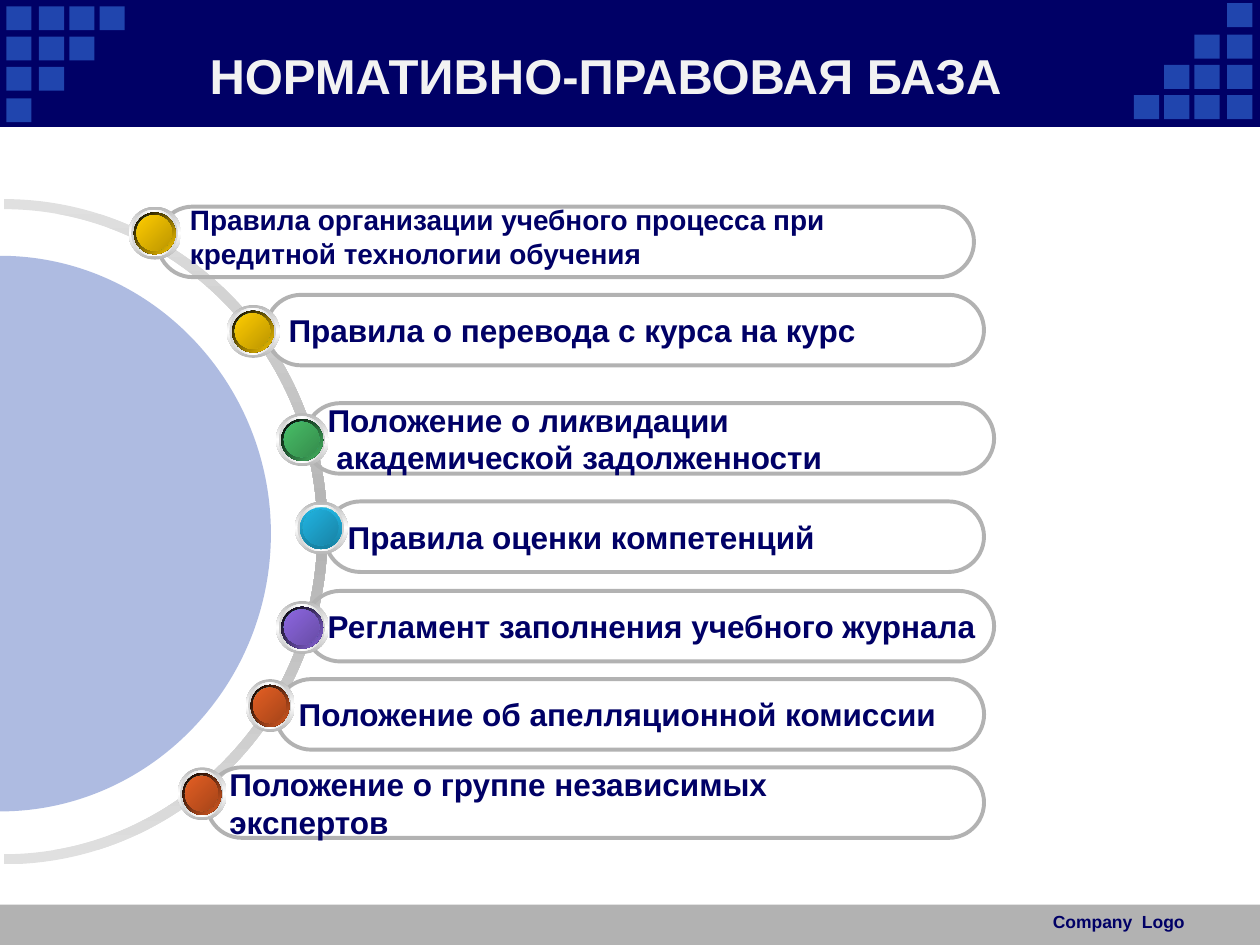
from lxml.etree import SubElement
from pptx import Presentation
from pptx.dml.color import RGBColor
from pptx.enum.shapes import MSO_SHAPE as Shape
from pptx.enum.text import MSO_ANCHOR as Anchor, MSO_AUTO_SIZE as AutoSize, PP_ALIGN as Align
from pptx.oxml.ns import qn
from pptx.util import Inches, Pt

COLUMNS, ROWS = 100, 75
CELL = Inches(0.1)
FONT = "Arial"
BEND = 0.55  # handle length of a quarter ellipse
COLORS = {
    "navy": "000066", "blue": "2045AE", "gray": "B2B2B2", "pale": "E0E0E0",
    "title": "F2F2F2", "black": "000000", "white": "FFFFFF", "teal": "3DC5C5",
    "yellow": "FFCC00", "green": "48BE67", "cyan": "21B3E1",
    "violet": "8D67E1", "orange": "E35E23",
}

# Pill (left, right, row), label lines with |italic| parts, ball (left, top, width), colour
ITEMS = [
    ((12.5, 77.3, 16.4), [], (10.2, 16.4, 4.2), "yellow"),
    ((21.1, 78.1, 23.4), ["Правила о перевода с курса на курс"], (18, 24.2, 4.2), "yellow"),
    ((24.2, 78.9, 32), ["Положение о ли|к|видации", " академической задолженности"],
     (21.9, 32.8, 4.2), "green"),
    ((25.8, 78.1, 39.8), ["Правила оценки компетенций"], (23.4, 39.8, 4.2), "cyan"),
    ((24.2, 78.9, 46.9), ["Регламент заполнения учебного журнала"], (21.9, 47.7, 4.2), "violet"),
    ((21.9, 78.1, 53.9), ["Положение об апелляционной комиссии"], (19.5, 53.9, 3.9), "orange"),
    ((16.4, 78.1, 60.9), ["Положение о группе независимых", "экспертов"],
     (14.1, 60.9, 3.9), "orange"),
]


def cells(*values):
    return [round(value * CELL) for value in values]


def half_ellipse(center, radius_x, radius_y):
    """Knots and handles of the right half, from top to bottom."""
    shares = [(0, -1), (BEND, -1), (1, -BEND), (1, 0), (1, BEND), (BEND, 1), (0, 1)]
    return [cells(center[0] + x * radius_x, center[1] + y * radius_y) for x, y in shares]


class SlideBuilder:
    def __init__(self, slide):
        self.slide = slide

    def color(self, name):
        return RGBColor.from_string(COLORS[name])

    def solid(self, shape, name, opacity=None):
        shape.fill.solid()
        shape.fill.fore_color.rgb = self.color(name)
        if opacity:
            color = shape.fill._xPr.find(qn("a:solidFill"))[0]
            SubElement(color, qn("a:alpha"), val=str(opacity * 1000))

    def gradient(self, shape, names, angle):
        """Evenly spaced stops, clockwise angle; "name 50" is a colour shaded to 50 %."""
        shape.fill.gradient()
        shape.fill.gradient_angle = -angle % 360
        stops = shape.fill._xPr.find(qn("a:gradFill")).find(qn("a:gsLst"))
        for stop in list(stops):
            stops.remove(stop)
        for index, name in enumerate(names):
            base, _, shade = name.partition(" ")
            position = 100000 * index // (len(names) - 1)
            stop = SubElement(stops, qn("a:gs"), pos=str(position))
            color = SubElement(stop, qn("a:srgbClr"), val=COLORS[base])
            if shade:
                SubElement(color, qn("a:shade"), val=str(int(shade) * 1000))

    def plain(self, shape):
        shape.shadow.inherit = False
        shape.line.fill.background()
        return shape

    def stroke(self, shape, name, width):
        shape.shadow.inherit = False
        shape.line.color.rgb = self.color(name)
        shape.line.width = Pt(width)

    def format_text(self, frame, size, name, align=Align.LEFT):
        for paragraph in frame.paragraphs:
            paragraph.alignment = align
            for run in paragraph.runs:
                run.font.name, run.font.size, run.font.bold = FONT, Pt(size), True
                run.font.color.rgb = self.color(name)

    def rectangle(self, left, top, width, height, name):
        shape = self.slide.shapes.add_shape(Shape.RECTANGLE, *cells(left, top, width, height))
        self.solid(self.plain(shape), name)
        return shape

    def title(self, text, left, top, width, height):
        title = self.slide.shapes.title
        title.left, title.top, title.width, title.height = cells(left, top, width, height)
        frame = title.text_frame
        frame.text = text
        frame.word_wrap, frame.auto_size = True, AutoSize.NONE
        frame.vertical_anchor = Anchor.TOP
        self.format_text(frame, 28, "title", Align.CENTER)
        self.slide.shapes._spTree.append(title._element)  # in front of the header band

    def text(self, text, left, top, width, height, size, align=Align.LEFT):
        box = self.slide.shapes.add_textbox(*cells(left, top, width, height))
        box.text_frame.word_wrap = True
        box.text_frame.text = text
        self.format_text(box.text_frame, size, "navy", align)

    def outline(self, *arcs):
        """Joins half ellipses by straight lines and closes the outline."""
        points = [point for arc in arcs for point in arc]
        builder = self.slide.shapes.build_freeform(*points[0])
        builder.add_line_segments(points[1:])
        shape = builder.convert_to_shape()
        lines = list(shape._element.iter(qn("a:lnTo")))
        size = len(arcs[0])
        for start in range(0, len(points), size):
            for first in (start, start + 3):  # two quarters of three points each
                curve, *others = lines[first:first + 3]
                curve.tag = qn("a:cubicBezTo")
                for other in others:
                    curve.append(other[0])
                    other.getparent().remove(other)
        return self.plain(shape)

    def pill(self, left, right, top, lines):
        shape = self.slide.shapes.add_shape(
            Shape.ROUNDED_RECTANGLE, *cells(left, top, right - left, 5.6))
        shape.adjustments[0] = 0.5
        shape.fill.background()
        self.stroke(shape, "gray", 2.25)
        frame = shape.text_frame
        frame.word_wrap, frame.vertical_anchor = False, Anchor.MIDDLE
        for index, line in enumerate(lines):
            paragraph = frame.add_paragraph() if index else frame.paragraphs[0]
            for part, text in enumerate(line.split("|")):
                run = paragraph.add_run()
                run.text = text
                run.font.italic = part % 2 == 1
        self.format_text(frame, 18, "navy")

    def ball(self, left, top, width, name, height=4.2):
        # Inset across, inset down and size as shares of the ball, then the gradient
        rim = (["cyan", "cyan 48"], 90) if name == "cyan" else (["black", name], 45)
        layers = [
            (0, 0, 1, ["white 47", "white", "white 47"], 90),
            (0.05, 0.06, 0.88, ["white 64", "white", "white 64"], 0),
            (0.1, 0.11, 0.79, ["white", "teal", "white"], 45),
            (0.1, 0.11, 0.79, *rim),
            (0.15, 0.16, 0.67, ["teal 55", "teal", "teal 55"], 315),
            (0.15, 0.16, 0.67, [name, name + " 50"], 45),
        ]
        group = self.slide.shapes.add_group_shape()
        for inset_x, inset_y, size, names, angle in layers:
            disc = group.shapes.add_shape(Shape.OVAL, *cells(
                left + inset_x * width, top + inset_y * height, size * width, size * height))
            self.gradient(self.plain(disc), names, angle)

    def item(self, pill, lines, ball, name):
        self.pill(*pill, lines)
        self.ball(*ball, name)


def main():
    presentation = Presentation()
    presentation.slide_width, presentation.slide_height = cells(COLUMNS, ROWS)
    slide = presentation.slides.add_slide(presentation.slide_layouts[5])
    builder = SlideBuilder(slide)

    # Footer and header bands
    builder.rectangle(0, 71.8, COLUMNS, 3.3, "gray")
    header = builder.rectangle(0, 0, COLUMNS, 10, "navy")
    builder.stroke(header, "navy", 0.75)

    # Corner squares: a staircase on the left, turned half round on the right
    for row, top in enumerate((0.5, 2.9, 5.3, 7.8)):
        for left in (0.5, 3.1, 5.5, 7.9)[:4 - row]:
            builder.rectangle(left, top, 2, 1.9, "blue")
            builder.rectangle(97.9 - left, 8.05 - top, 2, 1.9, "blue")

    builder.text("Company  Logo", 78.3, 71.8, 16.7, 3.2, 10, Align.RIGHT)

    # Ring and half disc
    center = (0.3, 42.2)
    ring = builder.outline(
        half_ellipse(center, 25.7, 26.4), half_ellipse(center, 24.9, 25.6)[::-1])
    builder.gradient(ring, ["pale", "gray", "pale"], 90)
    disc = builder.outline(half_ellipse((0, 42.35), 21.5, 22.05))
    builder.solid(disc, "blue", opacity=36)

    # List of documents; the first one has its label in a box of its own
    first, *others = ITEMS
    for item in others:
        builder.item(*item)
    builder.title("НОРМАТИВНО-ПРАВОВАЯ БАЗА", 12.5, 3.1, 71.1, 5.7)
    builder.text("Правила организации учебного процесса при кредитной технологии обучения",
                 14.1, 15.6, 58.6, 6.4, 16)
    builder.item(*first)

    presentation.save("out.pptx")


if __name__ == "__main__":
    main()
